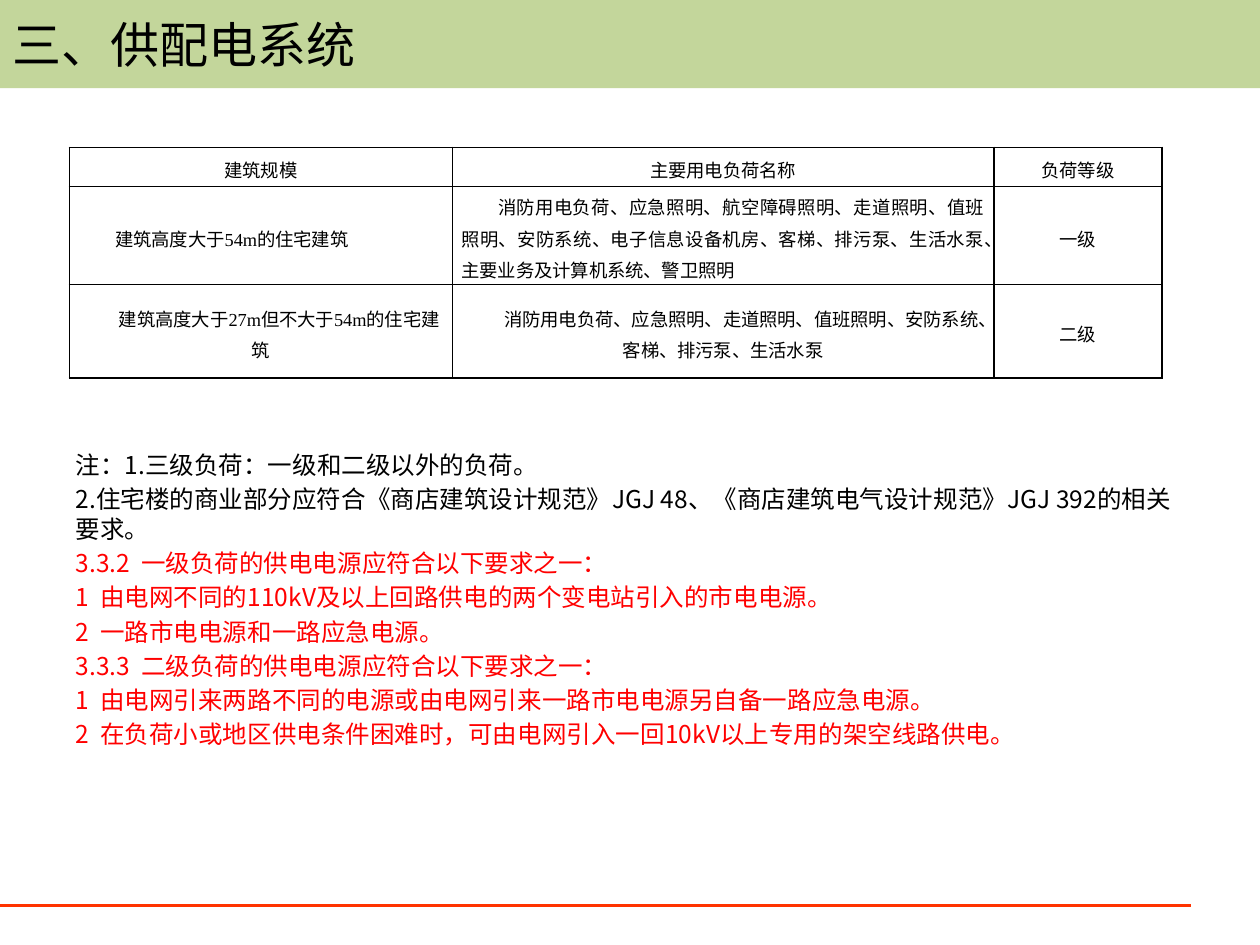
from dataclasses import dataclass
from lxml.etree import SubElement
from pptx import Presentation
from pptx.dml.color import RGBColor
from pptx.enum.shapes import MSO_CONNECTOR
from pptx.enum.text import MSO_ANCHOR, MSO_AUTO_SIZE, PP_ALIGN
from pptx.oxml.ns import qn
from pptx.util import Cm, Pt


@dataclass
class Theme:
    black: str = "000000"
    red: str = "FF0000"
    green: str = "C3D69B"
    rule: str = "FF3300"
    head: float = 28
    note: float = 14
    cell: float = 10.5
    sans: str = "Noto Sans CJK SC"
    serif: str = "Times New Roman"
    latin: str = "Calibri"


theme = Theme()


def write(para, text, font, size, color, **form):
    """Put one run in a paragraph and set the paragraph format."""
    run = para.add_run()
    run.text = text
    for key, val in dict(name=font, size=Pt(size)).items():
        setattr(run.font, key, val)
    run.font.color.rgb = RGBColor.from_string(color)
    SubElement(run.font._element, qn("a:ea"), typeface=theme.sans)
    for key, val in form.items():
        setattr(para, key, val)


def edge(cell):
    """Draw the four borders of a cell."""
    props = cell._tc.get_or_add_tcPr()
    for spot, side in enumerate(("lnL", "lnR", "lnT", "lnB")):
        line = props.makeelement(qn(f"a:{side}"), {"w": str(Pt(1))})
        fill = SubElement(line, qn("a:solidFill"))
        SubElement(fill, qn("a:srgbClr"), val=theme.black)
        props.insert(spot, line)


deck = Presentation()
deck.slide_width, deck.slide_height = Cm(25.4), Cm(19.05)
slide = deck.slides.add_slide(deck.slide_layouts[1])
title, body = slide.placeholders

# Bottom rule
rule = slide.shapes.add_connector(
    MSO_CONNECTOR.STRAIGHT, 0, Cm(18.26), Cm(24), Cm(18.26))
rule.line.color.rgb = RGBColor.from_string(theme.rule)
rule.line.width = Pt(1.75)
SubElement(rule._element.spPr, qn("a:effectLst"))

# Title band
box = dict(left=0, top=0, width=Cm(25.4), height=Cm(1.78))
for key, val in box.items():
    setattr(title, key, val)
title.fill.solid()
title.fill.fore_color.rgb = RGBColor.from_string(theme.green)
title.text_frame.vertical_anchor = MSO_ANCHOR.MIDDLE
title.text_frame.auto_size = MSO_AUTO_SIZE.NONE
write(title.text_frame.paragraphs[0], "三、供配电系统", theme.latin,
      theme.head, theme.black, alignment=PP_ALIGN.LEFT)

# Notes
box = dict(left=Cm(1.27), top=Cm(8.94), width=Cm(22.86), height=Cm(7.75))
for key, val in box.items():
    setattr(body, key, val)
notes = [
    "注：1.三级负荷：一级和二级以外的负荷。",
    "2.住宅楼的商业部分应符合《商店建筑设计规范》JGJ 48、《商店建筑电气设计规范》JGJ 392的相关要求。",
    "3.3.2  一级负荷的供电电源应符合以下要求之一：",
    "1  由电网不同的110kV及以上回路供电的两个变电站引入的市电电源。",
    "2  一路市电电源和一路应急电源。",
    "3.3.3  二级负荷的供电电源应符合以下要求之一：",
    "1  由电网引来两路不同的电源或由电网引来一路市电电源另自备一路应急电源。",
    "2  在负荷小或地区供电条件困难时，可由电网引入一回10kV以上专用的架空线路供电。",
]
frame = body.text_frame
frame.auto_size = MSO_AUTO_SIZE.NONE
for num, text in enumerate(notes):
    para = frame.add_paragraph() if num else frame.paragraphs[0]
    write(para, text, theme.sans, theme.note,
          theme.black if num < 2 else theme.red,
          line_spacing=Pt(16.8), space_before=Pt(2.8))
    props = para._p.get_or_add_pPr()
    props.set("marL", "0")
    props.set("indent", "0")
    SubElement(props, qn("a:buNone"))

# Load table
rows = [
    ("建筑规模", "主要用电负荷名称", "负荷等级"),
    ("建筑高度大于54m的住宅建筑",
     "消防用电负荷、应急照明、航空障碍照明、走道照明、值班照明、安防系统、"
     "电子信息设备机房、客梯、排污泵、生活水泵、主要业务及计算机系统、警卫照明",
     "一级"),
    ("建筑高度大于27m但不大于54m的住宅建筑",
     "消防用电负荷、应急照明、走道照明、值班照明、安防系统、客梯、排污泵、生活水泵",
     "二级"),
]
wide = [7.72, 10.92, 3.38]
high = [0.79, 1.98, 1.88]
table = slide.shapes.add_table(
    3, 3, Cm(1.4), Cm(2.97), Cm(sum(wide)), Cm(sum(high))).table
for col, size in zip(table.columns, wide):
    col.width = Cm(size)
for row, size in zip(table.rows, high):
    row.height = Cm(size)
inset = dict(margin_left=Cm(0.18), margin_right=Cm(0.18), margin_top=0,
             margin_bottom=0, vertical_anchor=MSO_ANCHOR.MIDDLE)
for r, texts in enumerate(rows):
    for c, text in enumerate(texts):
        cell = table.cell(r, c)
        for key, val in inset.items():
            setattr(cell, key, val)
        cell.fill.background()
        edge(cell)
        para = cell.text_frame.paragraphs[0]
        long = r > 0 and c < 2
        align = PP_ALIGN.JUSTIFY if long and r == 1 else PP_ALIGN.CENTER
        write(para, text, theme.serif, theme.cell, theme.black,
              alignment=align, line_spacing=Pt(18))
        if long:
            para._p.get_or_add_pPr().set("indent", str(Cm(0.74)))

deck.save("out.pptx")
